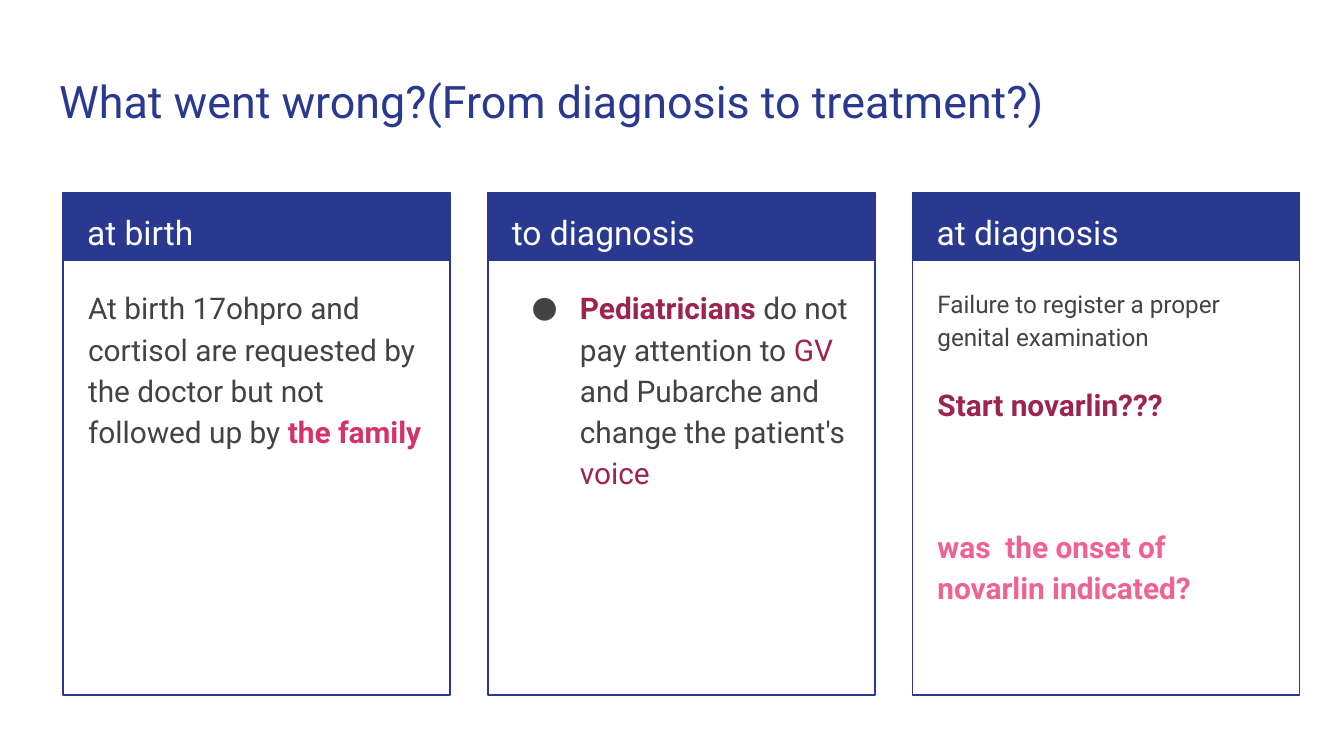
import pptx
import pptx.util
import pptx.dml.color
import pptx.enum.shapes
import pptx.enum.text
import pptx.oxml
import pptx.oxml.ns

RGB = pptx.dml.color.RGBColor
NAVY = RGB(0x2A, 0x39, 0x90)
WHITE = RGB(0xFF, 0xFF, 0xFF)
GREY = RGB(0x43, 0x43, 0x43)
WINE = RGB(0x9C, 0x25, 0x4D)
ROSE = RGB(0xD2, 0x33, 0x69)
PINK = RGB(0xF0, 0x62, 0x92)

COLS, ROWS = 100, 56
LEFT, STEP, WIDE = 4.7, 31.6, 28.8
TOP, HEAD, TALL = 14.25, 5.08, 37.25


def run(text, color=GREY, size=16, bold=False):
    return dict(text=text, color=color, size=size, bold=bold)


def para(*runs, before=0, after=0, line=1.15, dot=False):
    return dict(runs=runs, before=before, after=after, line=line, dot=dot)


def mark(par, dot):
    """Set the bullet and indent of a paragraph."""
    props = par._p.get_or_add_pPr()
    inch = pptx.util.Inches
    props.set("marL", str(inch(0.5 if dot else 0)))
    props.set("indent", str(inch(-0.36 if dot else 0)))
    ns = pptx.oxml.ns.nsdecls("a")
    tags = ["<a:buNone %s/>" % ns]
    if dot:
        tags = ['<a:buClr %s><a:srgbClr val="%s"/></a:buClr>' % (ns, GREY),
                '<a:buFont %s typeface="Roboto"/>' % ns,
                '<a:buChar %s char="●"/>' % ns]
    for tag in tags:
        props.append(pptx.oxml.parse_xml(tag))


def write(shape, paras, font="Roboto"):
    frame = shape.text_frame
    frame.word_wrap = True
    frame.auto_size = pptx.enum.text.MSO_AUTO_SIZE.NONE
    frame.vertical_anchor = pptx.enum.text.MSO_ANCHOR.TOP
    for side in ("left", "top", "right", "bottom"):
        setattr(frame, "margin_" + side, pptx.util.Inches(0.1))
    for i, item in enumerate(paras):
        par = frame.add_paragraph() if i else frame.paragraphs[0]
        mark(par, item["dot"])
        par.alignment = pptx.enum.text.PP_ALIGN.LEFT
        par.line_spacing = item["line"]
        par.space_before = pptx.util.Pt(item["before"])
        par.space_after = pptx.util.Pt(item["after"])
        for part in item["runs"]:
            piece = par.add_run()
            piece.text = part["text"]
            piece.font.name = font
            piece.font.size = pptx.util.Pt(part["size"])
            piece.font.bold = part["bold"]
            piece.font.color.rgb = part["color"]


class Deck:
    def __init__(self):
        self.prs = pptx.Presentation()
        self.prs.slide_width = pptx.util.Inches(10)
        self.prs.slide_height = pptx.util.Inches(5.625)
        # The comparison layout has a title and four bodies.
        self.slide = self.prs.slides.add_slide(self.prs.slide_layouts[4])
        self.slots = list(self.slide.placeholders)[1:]

    def box(self, x, y, w, h):
        """Turn columns and rows into slide lengths."""
        col = self.prs.slide_width / COLS
        row = self.prs.slide_height / ROWS
        return int(x * col), int(y * row), int(w * col), int(h * row)

    def fill(self, shape, area, paras):
        """Move a placeholder and write into it."""
        shape.left, shape.top, shape.width, shape.height = self.box(*area)
        write(shape, paras)

    def title(self, text):
        self.fill(self.slide.shapes.title, (3.4, 4.48, 93.2, 6.57),
                  [para(run(text, NAVY, 24), line=1)])

    def body(self, x, paras):
        self.fill(self.slots.pop(0), (x, 20.1, 27.1, 30.5), paras)

    def label(self, x, text):
        area = self.box(x, TOP, 27.3, 5)
        write(self.slide.shapes.add_textbox(*area),
              [para(run(text, WHITE, 18))])

    def rect(self, group, area, solid):
        kind = pptx.enum.shapes.MSO_SHAPE.RECTANGLE
        shape = group.shapes.add_shape(kind, *self.box(*area))
        shape.shadow.inherit = False
        if solid:
            shape.fill.solid()
            shape.fill.fore_color.rgb = NAVY
            shape.line.fill.background()
        else:
            shape.fill.background()
            shape.line.color.rgb = NAVY
            shape.line.width = pptx.util.Pt(0.75)

    def card(self, num, head, paras):
        x = LEFT + num * STEP
        group = self.slide.shapes.add_group_shape()
        self.rect(group, (x, TOP, WIDE, HEAD), True)
        self.rect(group, (x, TOP, WIDE, TALL), False)
        self.label(x + 0.8, head)
        self.body(x + 0.85, paras)

    def save(self):
        for slot in self.slots:
            slot.element.getparent().remove(slot.element)
        self.prs.save("out.pptx")


CARDS = [
    ("at birth", [
        para(run("At birth 17ohpro and cortisol are requested by the doctor "
                 "but not followed up by "),
             run("the family", ROSE, bold=True), after=16)]),
    ("to diagnosis", [
        para(run("Pediatricians", WINE, bold=True),
             run(" do not pay attention to "), run("GV", WINE),
             run(" and Pubarche and change the patient's "),
             run("voice", WINE), dot=True)]),
    ("at diagnosis", [
        para(run("Failure to register a proper genital examination", size=13)),
        para(run("Start novarlin???", WINE, bold=True), before=16),
        para(run("was  the onset of novarlin indicated?", PINK, bold=True),
             before=54, after=16)]),
]


def main():
    deck = Deck()
    deck.title("What went wrong?(From diagnosis to treatment?)")
    for num, (head, paras) in enumerate(CARDS):
        deck.card(num, head, paras)
    deck.save()


if __name__ == "__main__":
    main()
